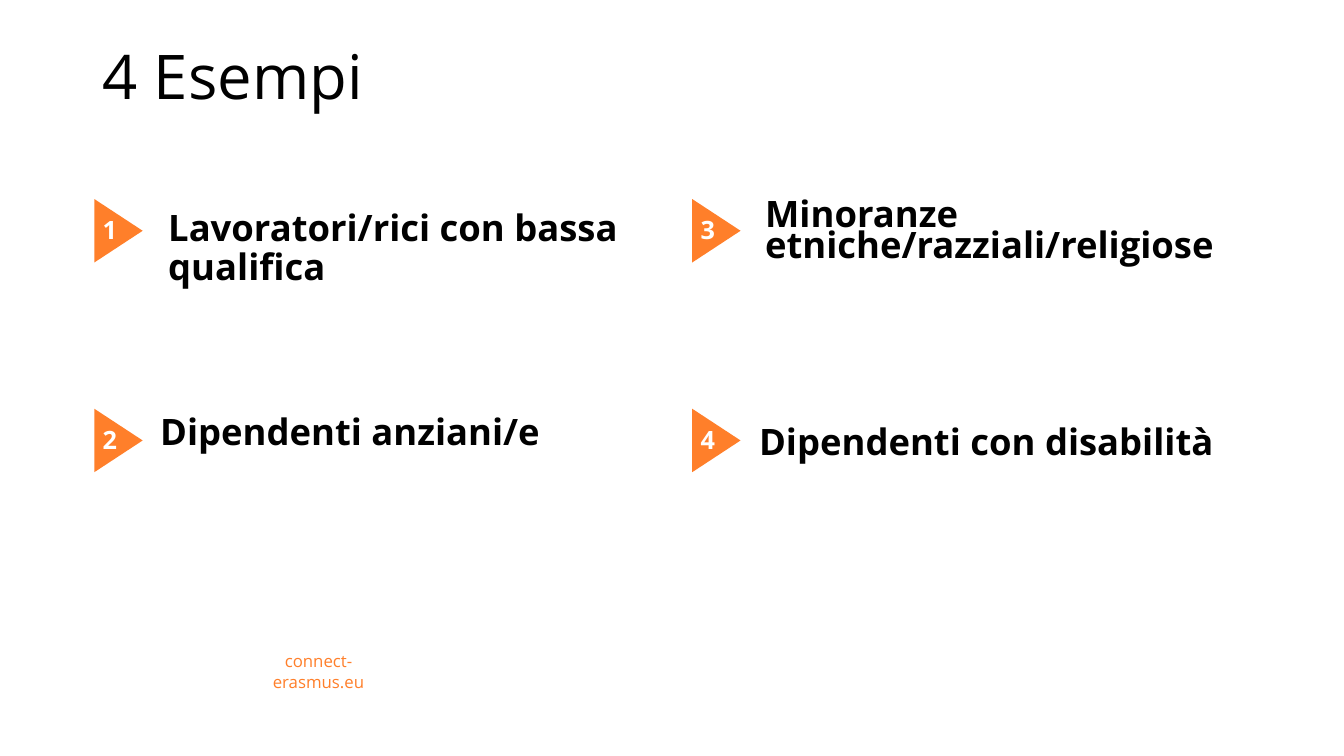
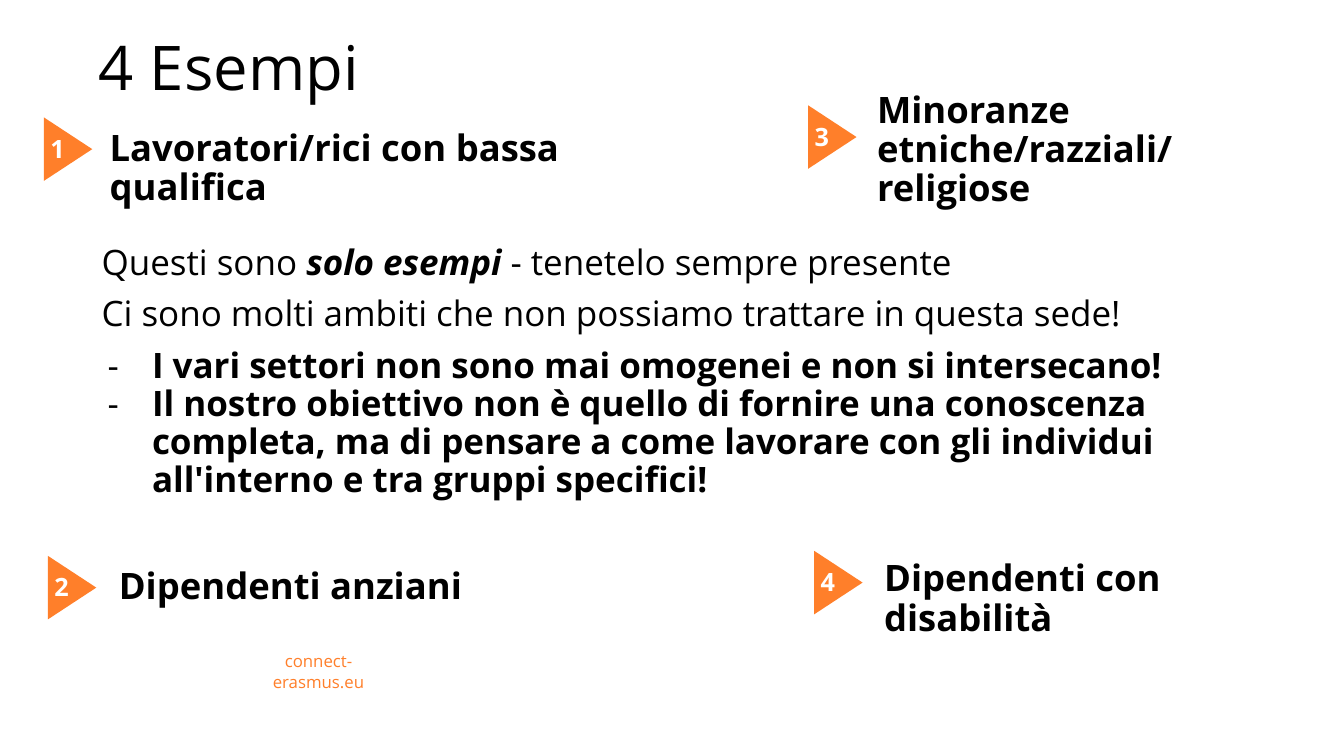
from dataclasses import dataclass

from lxml import etree
from pptx import Presentation
from pptx.dml import color
from pptx.enum import shapes, text
from pptx.oxml import ns
from pptx.util import Inches, Pt


@dataclass(frozen=True)
class Theme:
    """Colours, font and type sizes shared by the slides."""

    font: str = "Open Sans"
    ink: str = "000000"
    accent: str = "FF7F2A"
    paper: str = "FFFFFF"
    title: float = 44
    label: float = 26
    body: float = 25
    number: float = 18
    footer: float = 12


THEME = Theme()


def add_run(paragraph, words, size, hue=THEME.ink, bold=False, italic=False):
    """Append one formatted run to a paragraph."""
    run = paragraph.add_run()
    run.text = words
    run.font.name = THEME.font
    run.font.size = Pt(size)
    run.font.bold = bold
    run.font.italic = italic
    run.font.color.rgb = color.RGBColor.from_string(hue)


def add_text_box(slide, box):
    """Add a wrapping text box and return its text frame."""
    frame = slide.shapes.add_textbox(*map(Inches, box)).text_frame
    frame.word_wrap = True
    return frame


def add_title(slide, words, box):
    """Place and format the title placeholder."""
    title = slide.shapes.title
    title.left, title.top, title.width, title.height = map(Inches, box)
    frame = title.text_frame
    frame.auto_size = text.MSO_AUTO_SIZE.NONE
    frame.vertical_anchor = text.MSO_ANCHOR.BOTTOM
    paragraph = frame.paragraphs[0]
    paragraph.alignment = text.PP_ALIGN.LEFT
    paragraph.line_spacing = 0.9
    add_run(paragraph, words, THEME.title)


def add_footer(slide):
    """Write the web address at the foot of the slide."""
    frame = add_text_box(slide, (2.28, 6.51, 1.76, 0.3))
    frame.vertical_anchor = text.MSO_ANCHOR.MIDDLE
    paragraph = frame.paragraphs[0]
    paragraph.alignment = text.PP_ALIGN.CENTER
    add_run(paragraph, "connect-erasmus.eu", THEME.footer, THEME.accent)


def add_label(slide, words, box, spacing=0.9):
    """Write the bold name of one example."""
    paragraph = add_text_box(slide, box).paragraphs[0]
    paragraph.line_spacing = spacing
    add_run(paragraph, words, THEME.label, bold=True)


def add_marker(slide, number, left, top, inset):
    """Draw a triangle pointing right with its number inside."""
    triangle = slide.shapes.add_shape(
        shapes.MSO_SHAPE.ISOSCELES_TRIANGLE, *map(Inches, (left, top, 0.63, 0.48))
    )
    triangle.rotation = 90
    triangle.shadow.inherit = False
    triangle.fill.solid()
    triangle.fill.fore_color.rgb = color.RGBColor.from_string(THEME.accent)
    triangle.line.fill.background()
    frame = add_text_box(slide, (left + inset, top + 0.03, 0.35, 0.4))
    add_run(frame.paragraphs[0], str(number), THEME.number, THEME.paper, bold=True)


def add_dash(paragraph):
    """Give a paragraph a hanging dash bullet."""
    properties = paragraph._p.get_or_add_pPr()
    properties.set("marL", str(Inches(0.5)))
    properties.set("indent", str(Inches(-0.44)))
    bullet_color = etree.SubElement(properties, ns.qn("a:buClr"))
    etree.SubElement(bullet_color, ns.qn("a:srgbClr")).set("val", THEME.ink)
    etree.SubElement(properties, ns.qn("a:buFont")).set("typeface", THEME.font)
    etree.SubElement(properties, ns.qn("a:buChar")).set("char", "-")


def add_remarks(slide, box):
    """Write the remarks and the two dashed points."""
    remarks = [
        (False, 0, [("Questi sono ", False, False), ("solo esempi", True, True),
                    (" - tenetelo sempre presente", False, False)]),
        (False, 10, [("Ci sono molti ambiti che non possiamo trattare in questa sede!",
                      False, False)]),
        (True, 10, [("I vari settori non sono mai omogenei e non si intersecano!",
                     True, False)]),
        (True, 0, [("Il nostro obiettivo non è quello di fornire una conoscenza "
                    "completa, ma di pensare a come lavorare con gli individui "
                    "all'interno e tra gruppi specifici!", True, False)]),
    ]
    frame = add_text_box(slide, box)
    for index, (dashed, space, runs) in enumerate(remarks):
        paragraph = frame.add_paragraph() if index else frame.paragraphs[0]
        if dashed:
            add_dash(paragraph)
        paragraph.line_spacing = 0.9
        paragraph.space_before = Pt(space)
        for words, bold, italic in runs:
            add_run(paragraph, words, THEME.body, bold=bold, italic=italic)


def add_examples_slide(presentation, title_box, examples, inset):
    """Add a slide with the title, footer and four numbered examples."""
    slide = presentation.slides.add_slide(presentation.slide_layouts[5])
    add_title(slide, "4 Esempi", title_box)
    add_footer(slide)
    for number, (marker, label) in enumerate(examples, 1):
        add_label(slide, *label)
        add_marker(slide, number, *marker, inset)
    return slide


def main():
    """Build and save the two slides."""
    presentation = Presentation()
    presentation.slide_width = Inches(13.33)
    presentation.slide_height = Inches(7.5)
    workers = "Lavoratori/rici con bassa qualifica"
    minorities = "Minoranze etniche/razziali/religiose"
    disability = "Dipendenti con disabilità"
    left, right, upper, lower = 0.86, 6.79, 2.05, 4.13

    add_examples_slide(presentation, (0.92, 0.32, 11.5, 0.85), [
        ((left, upper), (workers, (1.57, 2.03, 4.99, 0.51))),
        ((left, lower), ("Dipendenti anziani/e", (1.49, 4.06, 5.57, 0.88))),
        ((right, upper), (minorities, (7.49, 1.97, 4.98, 1), 0.7)),
        ((right, lower), (disability, (7.43, 4.16, 4.99, 0.51))),
    ], 0.06)
    slide = add_examples_slide(presentation, (0.88, 0.23, 11.5, 0.85), [
        ((0.36, 1.24), (workers, (0.99, 1.24, 5.67, 0.62))),
        ((0.4, 5.59), ("Dipendenti anziani", (1.08, 5.66, 4.99, 0.4), 0.7)),
        ((7.94, 1.12), (minorities, (8.6, 0.86, 3.15, 1.76))),
        ((8, 5.54), (disability, (8.67, 5.51, 3.99, 1))),
    ], 0.04)
    add_remarks(slide, (0.91, 2.38, 11.5, 3.75))
    presentation.save("out.pptx")


if __name__ == "__main__":
    main()
